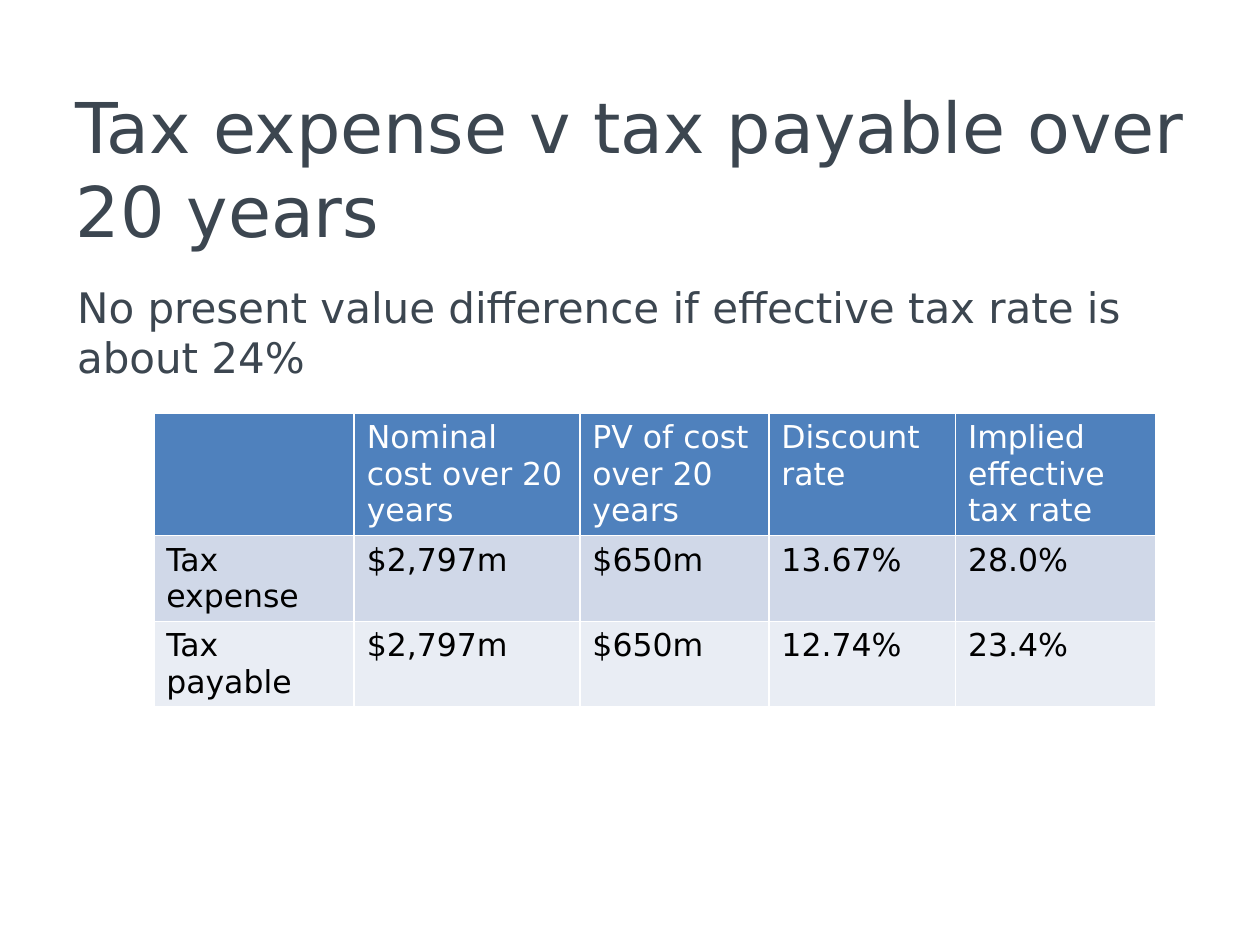
import pptx
import pptx.dml.color
import pptx.enum.text
import pptx.oxml
import pptx.oxml.ns
import pptx.util
from pptx.util import Cm

COLORS = {
    "text": "3C4650",
    "header": "4F81BD",
    "header_text": "FFFFFF",
    "cell_text": "000000",
    "border": "FFFFFF",
}
ROW_FILLS = [COLORS["header"], "D0D8E8", "E9EDF4"]
FONT = "DejaVu Sans"

HEADING = "Tax expense v tax payable over 20 years"
SUMMARY = "No present value difference if effective tax rate is about 24%"
TAX_ROWS = [
    ["", "Nominal cost over 20 years", "PV of cost over 20 years",
     "Discount rate", "Implied effective tax rate"],
    ["Tax expense", "$2,797m", "$650m", "13.67%", "28.0%"],
    ["Tax payable", "$2,797m", "$650m", "12.74%", "23.4%"],
]
COLUMN_WIDTHS = [4.04, 4.55, 3.81, 3.76, 4.04]
ROW_HEIGHTS = [2.46, 1.73, 1.73]


def write_text(frame, text, *, size, color, line_height=None):
    paragraph = frame.paragraphs[0]
    paragraph.alignment = pptx.enum.text.PP_ALIGN.LEFT
    paragraph.space_before = pptx.util.Pt(0)
    if line_height:
        paragraph.line_spacing = pptx.util.Pt(line_height)
    run = paragraph.add_run()
    run.text = text
    run.font.name = FONT
    run.font.size = pptx.util.Pt(size)
    run.font.bold = False
    run.font.color.rgb = pptx.dml.color.RGBColor.from_string(color)


def place(holder, left, top, width, height):
    """Move a placeholder and make its text start at the top, unscaled."""
    holder.left, holder.top = Cm(left), Cm(top)
    holder.width, holder.height = Cm(width), Cm(height)
    frame = holder.text_frame
    frame.word_wrap = True
    frame.auto_size = pptx.enum.text.MSO_AUTO_SIZE.NONE
    frame.vertical_anchor = pptx.enum.text.MSO_ANCHOR.TOP
    frame.margin_right = 0
    return frame


def remove_bullet(paragraph):
    properties = paragraph._p.get_or_add_pPr()
    properties.set("marL", "0")
    properties.set("indent", "0")
    properties.append(pptx.oxml.parse_xml(
        f'<a:buNone {pptx.oxml.ns.nsdecls("a")}/>'))


def add_borders(cell):
    properties = cell._tc.get_or_add_tcPr()
    for side in "LRTB":
        properties.append(pptx.oxml.parse_xml(
            f'<a:ln{side} {pptx.oxml.ns.nsdecls("a")} w="12700"><a:solidFill>'
            f'<a:srgbClr val="{COLORS["border"]}"/></a:solidFill></a:ln{side}>'))


def add_tax_table(slide, left, top):
    table = slide.shapes.add_table(
        len(TAX_ROWS), len(COLUMN_WIDTHS), Cm(left), Cm(top),
        Cm(sum(COLUMN_WIDTHS)), Cm(sum(ROW_HEIGHTS))).table
    for column, width in zip(table.columns, COLUMN_WIDTHS):
        column.width = Cm(width)
    for index, (row, height, fill, texts) in enumerate(
            zip(table.rows, ROW_HEIGHTS, ROW_FILLS, TAX_ROWS)):
        row.height = Cm(height)
        color = COLORS["cell_text" if index else "header_text"]
        for cell, text in zip(row.cells, texts):
            add_borders(cell)
            cell.fill.solid()
            cell.fill.fore_color.rgb = pptx.dml.color.RGBColor.from_string(fill)
            write_text(cell.text_frame, text, size=18, color=color)


def main():
    deck = pptx.Presentation()
    deck.slide_width, deck.slide_height = Cm(25.4), Cm(19.05)
    slide = deck.slides.add_slide(deck.slide_layouts[1])

    heading = place(slide.shapes.title, 1.27, 1.55, 22.86, 2.41)
    write_text(heading, HEADING, size=40, color=COLORS["text"], line_height=48)

    summary = place(slide.placeholders[1], 1.3, 5.54, 22.81, 1.6)
    remove_bullet(summary.paragraphs[0])
    write_text(summary, SUMMARY, size=24, color=COLORS["text"], line_height=28.8)

    add_tax_table(slide, 3.1, 8.33)
    deck.save("out.pptx")


if __name__ == "__main__":
    main()
